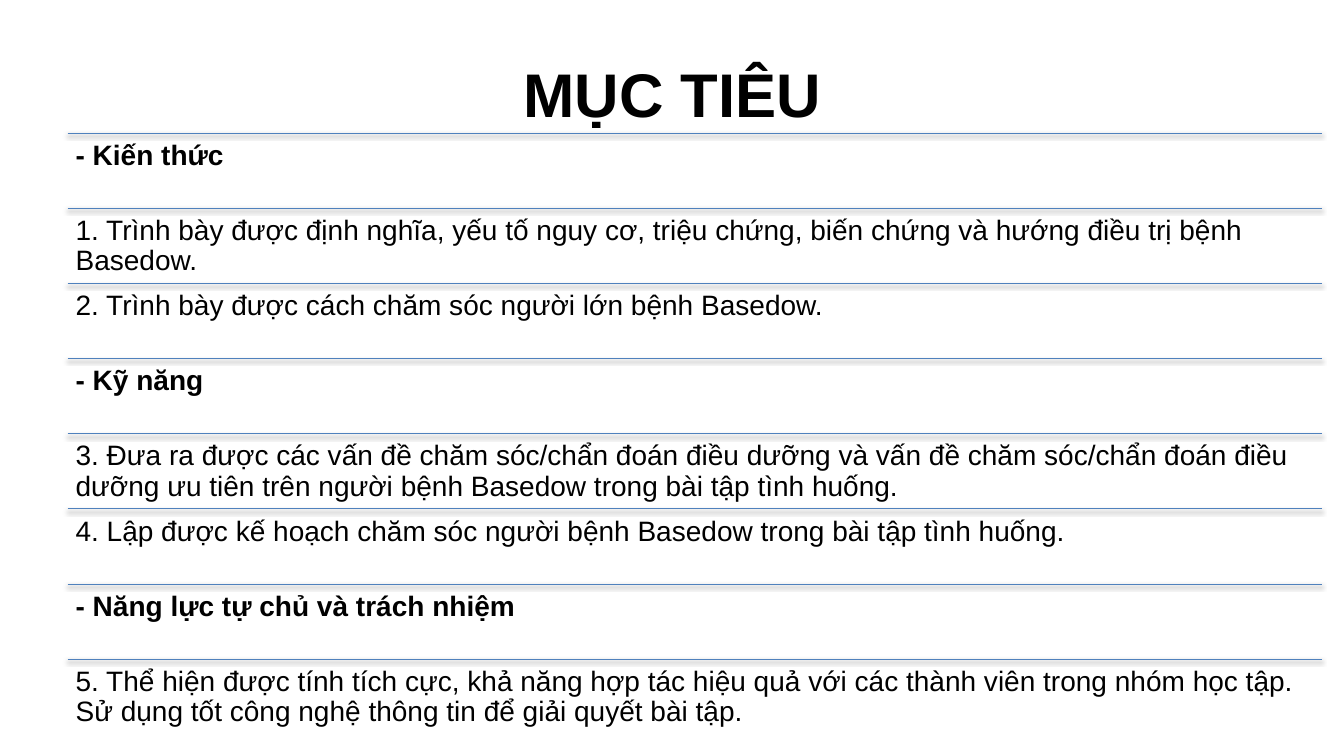
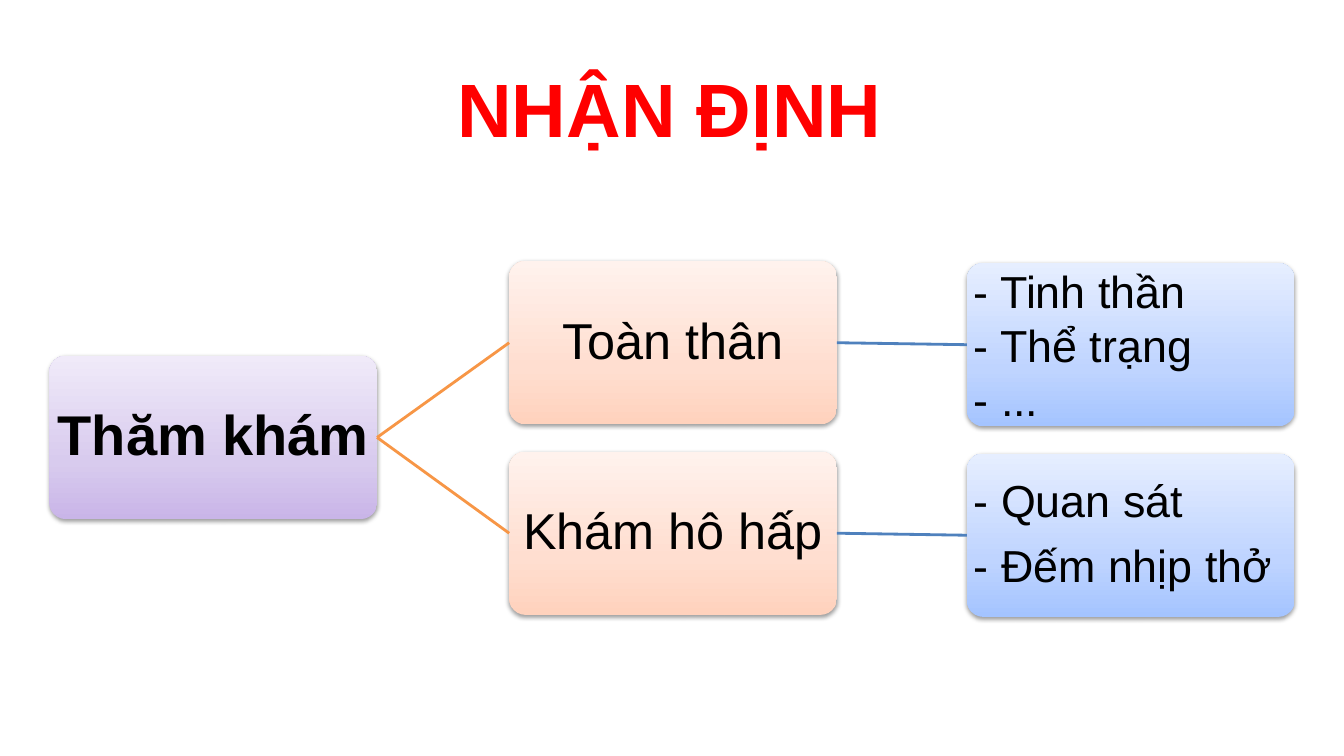
from pptx import Presentation
from pptx.dml.color import RGBColor
from pptx.enum import shapes, text
from pptx.oxml import parse_xml
from pptx.oxml.ns import nsdecls, qn
from pptx.util import Inches, Pt

# Shared style
FONT = "Arial"
HUES = {"ink": "000000", "red": "FF0000", "blue": "4F81BD", "orange": "F79646"}
FADES = {  # gradient stops from bottom to top
    "violet": ("C9B5E8", "D8CBEE", "F0EAF9"),
    "peach": ("FFD2BD", "FFDED0", "FFF2ED"),
    "sky": ("A4C4FF", "BFD4FF", "E6EEFF"),
}
STOPS = (0, 35, 100)
LEFT, MID = text.PP_ALIGN.LEFT, text.PP_ALIGN.CENTER
TOP, HALF = text.MSO_ANCHOR.TOP, text.MSO_ANCHOR.MIDDLE

# Content: goals as (text, is heading)
GOALS = [
    ("- Kiến thức", True),
    ("1. Trình bày được định nghĩa, yếu tố nguy cơ, triệu chứng, biến chứng "
     "và hướng điều trị bệnh Basedow.", False),
    ("2. Trình bày được cách chăm sóc người lớn bệnh Basedow.", False),
    ("- Kỹ năng", True),
    ("3. Đưa ra được các vấn đề chăm sóc/chẩn đoán điều dưỡng và vấn đề chăm "
     "sóc/chẩn đoán điều dưỡng ưu tiên trên người bệnh Basedow trong bài tập "
     "tình huống.", False),
    ("4. Lập được kế hoạch chăm sóc người bệnh Basedow trong bài tập "
     "tình huống.", False),
    ("- Năng lực tự chủ và trách nhiệm", True),
    ("5. Thể hiện được tính tích cực, khả năng hợp tác hiệu quả với các thành "
     "viên trong nhóm học tập. Sử dụng tốt công nghệ thông tin để giải quyết "
     "bài tập.", False),
]
# Content: exam tree as (branch, leaf lines, leaf line spacing)
ROOT = "Thăm khám"
TREE = [
    ("Toàn thân", ["- Tinh thần", "- Thể trạng", "- ..."], 1),
    ("Khám hô hấp", ["- Quan sát", "- Đếm nhịp thở"], 0.9),
]


def write(shape, lines, size, bold=False, hue="ink", align=LEFT, anchor=HALF,
          inset=0.08, space=0.9):
    frame = shape.text_frame
    frame.word_wrap = True
    frame.vertical_anchor = anchor
    frame.margin_left = frame.margin_right = Inches(inset)
    frame.margin_top = frame.margin_bottom = Inches(inset)
    for i, line in enumerate(lines):
        par = frame.add_paragraph() if i else frame.paragraphs[0]
        par.alignment = align
        par.line_spacing = space
        par.space_after = Pt(round(size * 0.39) if space < 1 else 0)
        run = par.add_run()
        run.text = line
        run.font.name, run.font.size, run.font.bold = FONT, Pt(size), bold
        run.font.color.rgb = RGBColor.from_string(HUES[hue])


def shade(shape, alpha, dist):
    shape.element.spPr.append(parse_xml(
        f'<a:effectLst {nsdecls("a")}><a:outerShdw blurRad="{Pt(3.1)}" '
        f'dist="{Pt(dist)}" dir="5400000" rotWithShape="0">'
        f'<a:srgbClr val="{HUES["ink"]}"><a:alpha val="{alpha * 1000}"/>'
        '</a:srgbClr></a:outerShdw></a:effectLst>'))


def rule(slide, start, end, hue, width):
    line = slide.shapes.add_connector(
        shapes.MSO_CONNECTOR.STRAIGHT, *map(Inches, start + end))
    line.line.color.rgb = RGBColor.from_string(HUES[hue])
    line.line.width = Pt(width)
    return line


def join(slide, a, b, hue):
    line = rule(slide, (0, 0), (1, 1), hue, 2)
    line.begin_connect(a, 3)
    line.end_connect(b, 1)
    line.element.spPr.append(parse_xml(f'<a:effectLst {nsdecls("a")}/>'))


def card(slide, x, y, fade, lines, size, **form):
    box = slide.shapes.add_shape(
        shapes.MSO_SHAPE.ROUNDED_RECTANGLE,
        Inches(x), Inches(y), Inches(3.25), Inches(1.62))
    box.adjustments[0] = 0.1
    box.fill.gradient()
    box.fill.gradient_angle = 90
    stops = box.element.spPr.find(qn("a:gradFill")).find(qn("a:gsLst"))
    for old in list(stops):
        stops.remove(old)
    for pos, tone in zip(STOPS, FADES[fade]):
        stops.append(parse_xml(
            f'<a:gs {nsdecls("a")} pos="{pos * 1000}">'
            f'<a:srgbClr val="{tone}"/></a:gs>'))
    box.line.fill.background()
    shade(box, 38, 1.6)
    write(box, lines, size, inset=0.02, **form)
    return box


def start(deck, name, area, size, hue):
    slide = deck.slides.add_slide(deck.slide_layouts[5])
    title = slide.shapes.title
    title.left, title.top, title.width, title.height = map(Inches, area)
    write(title, [name], size, bold=True, hue=hue, align=MID, space=1)
    return slide


def goals(deck):
    slide = start(deck, "MỤC TIÊU", (0.67, 0.3, 12, 1.25), 44, "ink")
    x, top, wide, step = 0.67, 1.32, 12.44, 0.7457
    for i, (line, head) in enumerate(GOALS):
        y = top + i * step
        shade(rule(slide, (x, y), (x + wide, y), "blue", 0.75), 35, 1.8)
        box = slide.shapes.add_textbox(
            Inches(x), Inches(y), Inches(wide), Inches(step))
        write(box, [line], 20, bold=head, anchor=TOP)


def exam(deck):
    slide = start(deck, "NHẬN ĐỊNH", (0.89, 0.48, 11.5, 1.16), 54, "red")
    root = card(slide, 0.49, 3.53, "violet", [ROOT], 40, bold=True, align=MID)
    for i, (name, lines, space) in enumerate(TREE):
        y = 2.59 + i * 1.89
        branch = card(slide, 5.05, y, "peach", [name], 36, align=MID)
        leaf = card(slide, 9.59, y + 0.02, "sky", lines, 32, space=space)
        join(slide, root, branch, "orange")
        join(slide, branch, leaf, "blue")


def main():
    deck = Presentation()
    deck.slide_width, deck.slide_height = Inches(13.33), Inches(7.5)
    goals(deck)
    exam(deck)
    deck.save("out.pptx")


if __name__ == "__main__":
    main()
